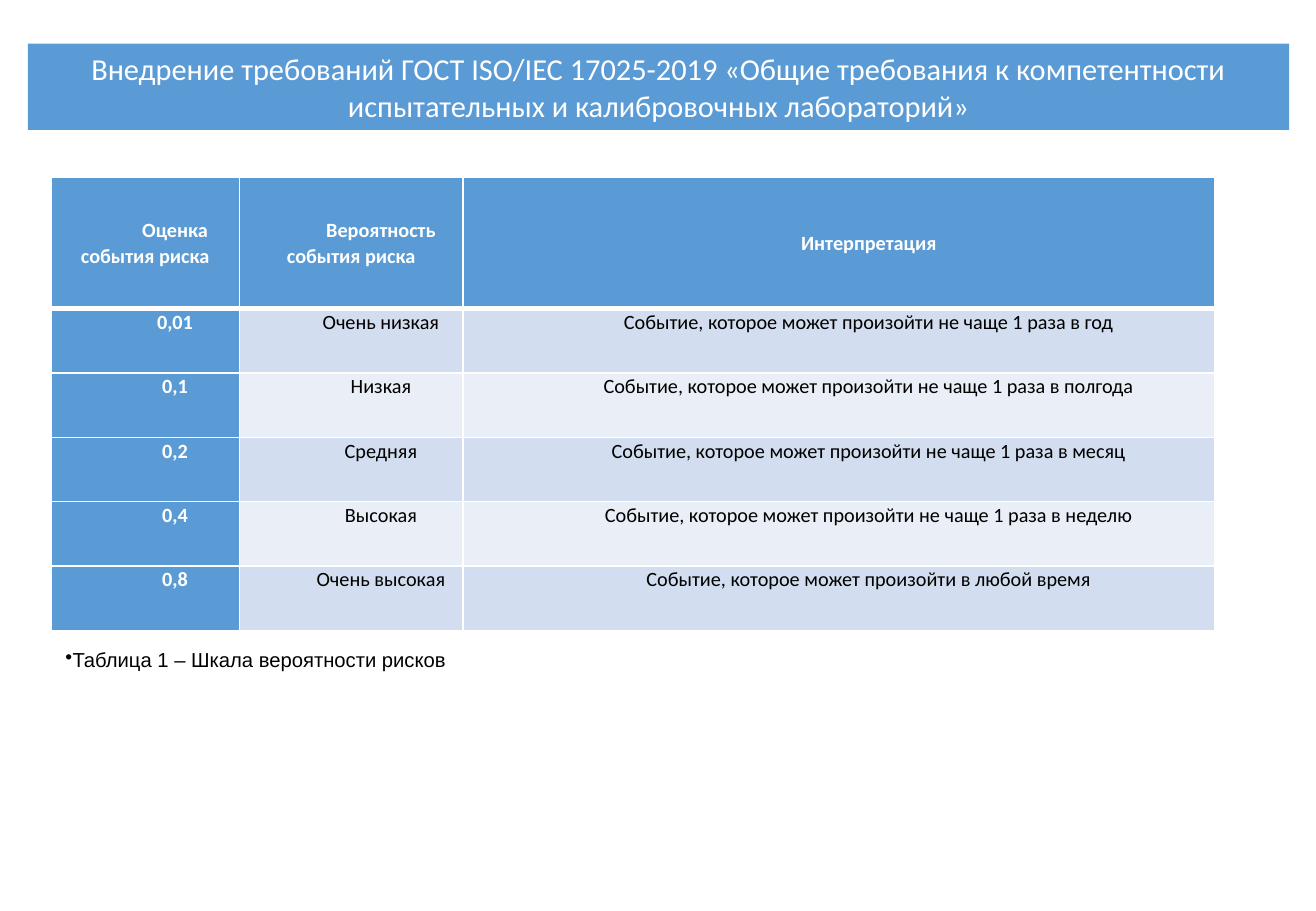
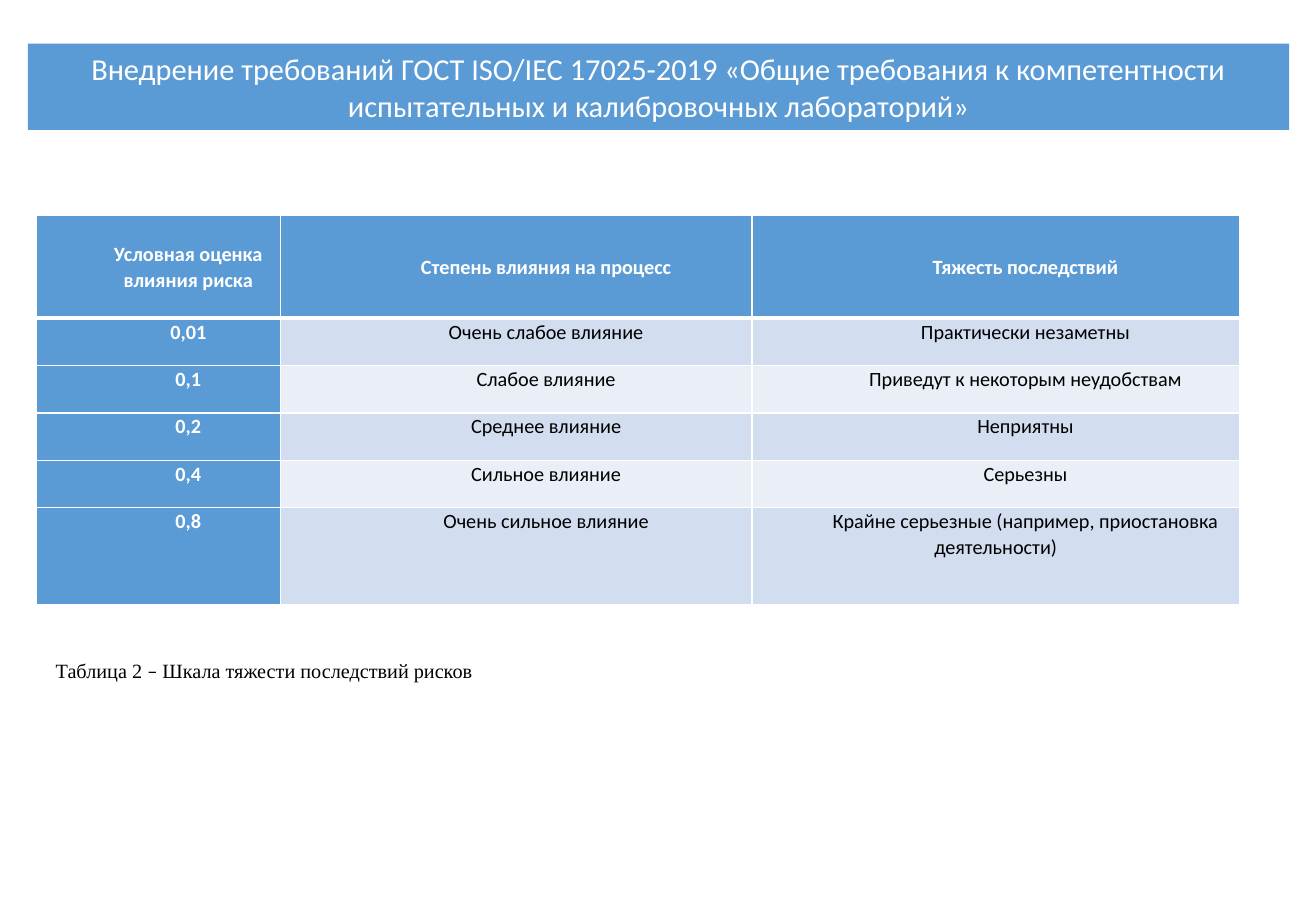
import pptx
import pptx.util
import pptx.dml.color
import pptx.enum.shapes
import pptx.enum.text
import pptx.oxml.ns
from lxml import etree

# Content
TITLE = ("Внедрение требований ГОСТ ISO/IEC 17025-2019 «Общие требования "
         "к компетентности испытательных и калибровочных лабораторий»")
SCORES = ["0,01", "0,1", "0,2", "0,4", "0,8"]
EVENT = "Событие, которое может произойти "

SLIDES = [
    {
        "header": ["Оценка события риска", "Вероятность события риска", "Интерпретация"],
        "levels": ["Очень низкая", "Низкая", "Средняя", "Высокая", "Очень высокая"],
        "meanings": [EVENT + when for when in (
            "не чаще 1 раза в год", "не чаще 1 раза в полгода",
            "не чаще 1 раза в месяц", "не чаще 1 раза в неделю", "в любой время")],
        "table_at": (42, 146),
        "columns": [155, 184, 619],
        "rows": [108] + [53] * 5,
        "caption": [("Таблица 1 – Шкала вероятности рисков", "Arial")],
        "caption_box": (23, 518, 1083, 50),
        "caption_indent": 21,
        "bullet": "•",
        "wrap": False,
    },
    {
        "header": ["Условная оценка\nвлияния риска", "Степень влияния на процесс",
                   "Тяжесть последствий"],
        "levels": [level + " влияние" for level in (
            "Очень слабое", "Слабое", "Среднее", "Сильное", "Очень сильное")],
        "meanings": ["Практически незаметны", "Приведут к некоторым неудобствам",
                     "Неприятны", "Серьезны",
                     "Крайне серьезные (например, приостановка деятельности)"],
        "table_at": (30, 177),
        "columns": [201, 388, 401],
        "rows": [85] + [39] * 4 + [80],
        "caption": [("Таблица 2 ", "Times New Roman"), ("–", "Calibri"),
                    (" Шкала тяжести последствий рисков", "Times New Roman")],
        "caption_box": (-13, 537, 817, 30),
        "caption_indent": 49,
        "bullet": None,
        "wrap": True,
    },
]

# Shared style
BLUE, WHITE, BLACK = "5B9BD5", "FFFFFF", "000000"
BANDS = ["D2DEEF", "EAEFF7"]
SLIDE_SIZE = (1083, 750)
TITLE_BAND = (23, 36, 1038, 71)
CELL_INDENT, CELL_MARGIN = 49, 7
THIN, THICK = 1, 3
ALIGN = pptx.enum.text.PP_ALIGN
MIDDLE = pptx.enum.text.MSO_ANCHOR.MIDDLE


def px(length):
    """100 px to the inch."""
    return pptx.util.Emu(length * 9144)


def box(lengths):
    return [px(length) for length in lengths]


def color(hex_code):
    return pptx.dml.color.RGBColor.from_string(hex_code)


def fill(part, hex_code):
    part.fill.solid()
    part.fill.fore_color.rgb = color(hex_code)


def style(run, size, hex_code, font="Calibri", bold=False):
    run.font.size = pptx.util.Pt(size)
    run.font.name = font
    run.font.bold = bold
    run.font.color.rgb = color(hex_code)


def indent(paragraph, length):
    properties = paragraph._p.get_or_add_pPr()
    properties.set("marL", "0")
    properties.set("indent", str(px(length)))
    return properties


def add_xml(parent, tag, **attributes):
    return etree.SubElement(parent, pptx.oxml.ns.qn(tag), attributes)


def add_borders(cell, top, bottom):
    properties = cell._tc.get_or_add_tcPr()
    for side, width in zip("LRTB", (THIN, THIN, top, bottom)):
        line = add_xml(properties, "a:ln" + side, w=str(pptx.util.Pt(width)))
        add_xml(add_xml(line, "a:solidFill"), "a:srgbClr", val=WHITE)


def add_title(slide):
    band = slide.shapes.add_shape(
        pptx.enum.shapes.MSO_SHAPE.RECTANGLE, *box(TITLE_BAND))
    band.shadow.inherit = False
    fill(band, BLUE)
    band.line.fill.background()
    band.text_frame.text = TITLE
    band.text_frame.word_wrap = True
    heading = band.text_frame.paragraphs[0]
    heading.alignment = ALIGN.CENTER
    style(heading.runs[0], 18, WHITE)


def format_cell(cell, text, row, column):
    is_header = row == 0
    is_blue = is_header or column == 0
    add_borders(cell, THICK if row == 1 else THIN, THICK if is_header else THIN)
    fill(cell, BLUE if is_blue else BANDS[(row - 1) % 2])
    cell.margin_left = cell.margin_right = px(CELL_MARGIN)
    cell.margin_top = cell.margin_bottom = 0
    if is_header:
        cell.vertical_anchor = MIDDLE
    cell.text_frame.text = text
    for paragraph in cell.text_frame.paragraphs:
        paragraph.alignment = ALIGN.CENTER
        paragraph.line_spacing = 1.07
        indent(paragraph, CELL_INDENT)
        style(paragraph.runs[0], 12, WHITE if is_blue else BLACK, bold=is_blue)


def add_scale(slide, content):
    records = [content["header"], *zip(SCORES, content["levels"], content["meanings"])]
    columns, rows = content["columns"], content["rows"]
    scale = slide.shapes.add_table(
        len(rows), len(columns),
        *box((*content["table_at"], sum(columns), sum(rows)))).table
    scale.first_row = scale.horz_banding = False
    for column, width in zip(scale.columns, columns):
        column.width = px(width)
    for r, (record, height) in enumerate(zip(records, rows)):
        scale.rows[r].height = px(height)
        for c, text in enumerate(record):
            format_cell(scale.cell(r, c), text, r, c)


def add_caption(slide, content):
    frame = slide.shapes.add_textbox(*box(content["caption_box"])).text_frame
    frame.word_wrap = content["wrap"]
    frame.auto_size = pptx.enum.text.MSO_AUTO_SIZE.SHAPE_TO_FIT_TEXT
    frame.vertical_anchor = MIDDLE
    caption = frame.paragraphs[0]
    caption.alignment = ALIGN.JUSTIFY
    properties = indent(caption, content["caption_indent"])
    if content["bullet"]:
        add_xml(properties, "a:buChar", char=content["bullet"])
    for text, font in content["caption"]:
        run = caption.add_run()
        run.text = text
        style(run, 12, BLACK, font)


def main():
    deck = pptx.Presentation()
    deck.slide_width, deck.slide_height = box(SLIDE_SIZE)
    for content in SLIDES:
        slide = deck.slides.add_slide(deck.slide_layouts[6])
        add_title(slide)
        add_scale(slide, content)
        add_caption(slide, content)
    deck.save("out.pptx")


if __name__ == "__main__":
    main()
